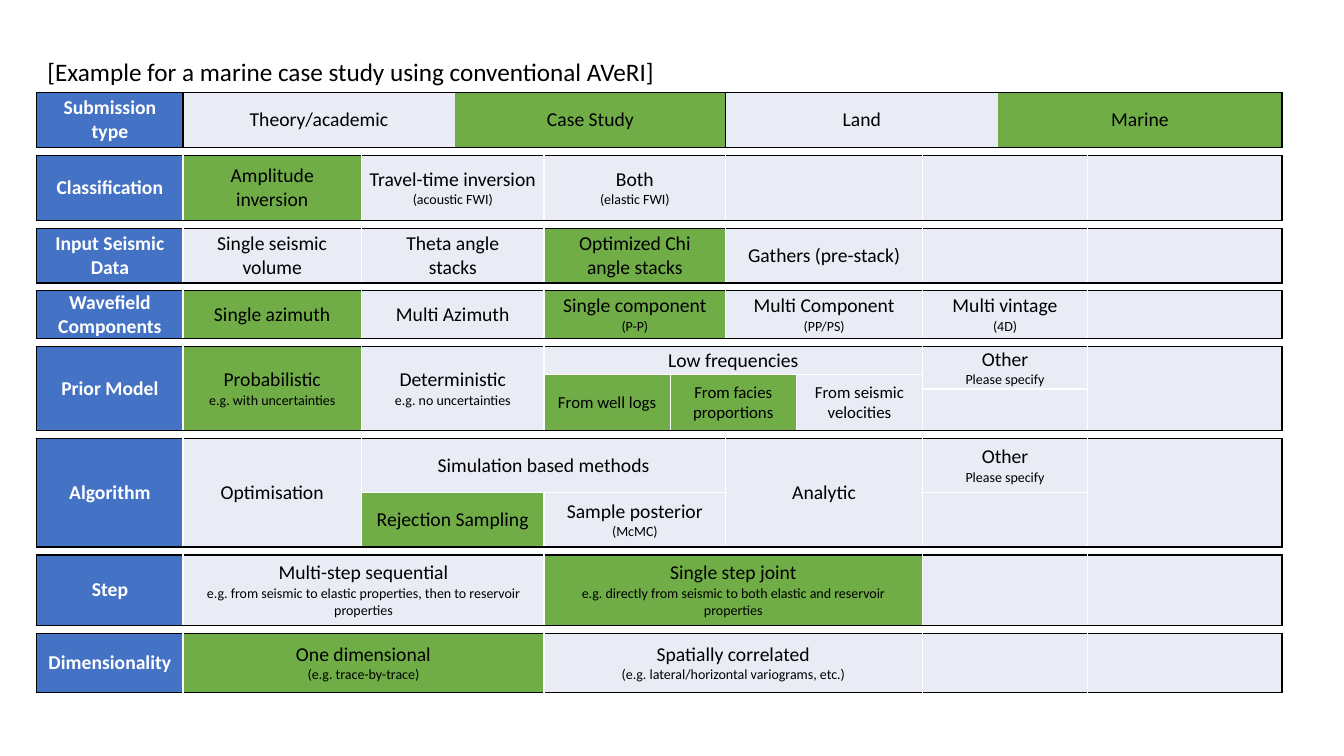
from typing import NamedTuple

from lxml.etree import SubElement
from pptx import Presentation
from pptx.dml.color import RGBColor
from pptx.enum.text import MSO_ANCHOR, MSO_AUTO_SIZE, PP_ALIGN
from pptx.oxml.ns import qn
from pptx.util import Cm, Pt

BLACK = RGBColor(0x00, 0x00, 0x00)
WHITE = RGBColor(0xFF, 0xFF, 0xFF)
BLUE = RGBColor(0x44, 0x72, 0xC4)
GREEN = RGBColor(0x70, 0xAD, 0x47)
PALE = RGBColor(0xE9, 0xEB, 0xF5)

COLUMN_WIDTHS = [3.68, 4.5, 2.36, 2.24, 3.18, 1.4, 1.78, 3.18, 1.9, 2.26, 4.9]
COLUMN_COUNT = len(COLUMN_WIDTHS)
GAP_HEIGHT = 0.2


class Option(NamedTuple):
    column: int
    column_span: int
    text: str = ""
    note: str = ""
    chosen: bool = False
    row: int = 0
    row_span: int = 1
    size: int = 14


class Band(NamedTuple):
    label: str
    heights: list
    options: list
    dividers: dict = {}  # column -> line colour, white where not named


BANDS = [
    Band("Submission\ntype", [1.37], [
        Option(1, 2, "Theory/academic"),
        Option(3, 3, "Case Study", chosen=True),
        Option(6, 3, "Land"),
        Option(9, 2, "Marine", chosen=True),
    ], {1: BLACK, 3: None, 6: BLACK, 9: None}),
    Band("Classification", [1.65], [
        Option(1, 1, "Amplitude\ninversion", chosen=True),
        Option(2, 2, "Travel-time inversion", "(acoustic FWI)"),
        Option(4, 2, "Both", "(elastic FWI)"),
        Option(6, 2), Option(8, 2), Option(10, 1),
    ]),
    Band("Input Seismic Data", [1.37], [
        Option(1, 1, "Single seismic volume"),
        Option(2, 2, "Theta angle\nstacks"),
        Option(4, 2, "Optimized Chi\nangle stacks", chosen=True),
        Option(6, 2, "Gathers (pre-stack)"),
        Option(8, 2), Option(10, 1),
    ]),
    Band("Wavefield\nComponents", [1.19], [
        Option(1, 1, "Single azimuth", chosen=True),
        Option(2, 2, "Multi Azimuth"),
        Option(4, 2, "Single component", "(P-P)", chosen=True),
        Option(6, 2, "Multi Component", "(PP/PS)"),
        Option(8, 2, "Multi vintage", "(4D)"),
        Option(10, 1),
    ]),
    Band("Prior Model", [0.71, 0.36, 1.04], [
        Option(1, 1, "Probabilistic", "e.g. with uncertainties", True, row_span=3),
        Option(2, 2, "Deterministic", "e.g. no uncertainties", row_span=3),
        Option(4, 4, "Low frequencies"),
        Option(4, 1, "From well logs", chosen=True, row=1, row_span=2, size=12),
        Option(5, 2, "From facies proportions", chosen=True, row=1, row_span=2, size=12),
        Option(7, 1, "From seismic velocities", row=1, row_span=2, size=12),
        Option(8, 2, "Other", "Please specify", row_span=2),
        Option(8, 2, row=2),
        Option(10, 1, row_span=3),
    ]),
    Band("Algorithm", [1.37, 1.37], [
        Option(1, 1, "Optimisation", row_span=2),
        Option(2, 4, "Simulation based methods"),
        Option(2, 2, "Rejection Sampling", chosen=True, row=1),
        Option(4, 2, "Sample posterior", "(McMC)", row=1),
        Option(6, 2, "Analytic", row_span=2),
        Option(8, 2, "Other", "Please specify"),
        Option(8, 2, row=1),
        Option(10, 1, row_span=2),
    ]),
    Band("Step", [1.77], [
        Option(1, 3, "Multi-step sequential",
               "e.g. from seismic to elastic properties, then to reservoir properties"),
        Option(4, 4, "Single step joint",
               "e.g. directly from seismic to both elastic and reservoir properties", True),
        Option(8, 2), Option(10, 1),
    ]),
    Band("Dimensionality", [1.5], [
        Option(1, 3, "One dimensional", "(e.g. trace-by-trace)", True),
        Option(4, 4, "Spatially correlated", "(e.g. lateral/horizontal variograms, etc.)"),
        Option(8, 2), Option(10, 1),
    ]),
]


class SlideBuilder:
    font_name = "Calibri"
    note_size = 10

    def __init__(self, slide):
        self.slide = slide

    def add_run(self, paragraph, text, size, color=BLACK, bold=False):
        for index, line in enumerate(text.split("\n")):
            if index:
                paragraph.add_line_break()
            run = paragraph.add_run()
            run.text = line
            run.font.name = self.font_name
            run.font.size = Pt(size)
            run.font.bold = bold
            run.font.color.rgb = color

    def add_title(self, text, left, top, width, height):
        title = self.slide.shapes.title
        title.left, title.top, title.width, title.height = map(Cm, (left, top, width, height))
        frame = title.text_frame
        frame.word_wrap = False
        frame.auto_size = MSO_AUTO_SIZE.NONE
        frame.vertical_anchor = MSO_ANCHOR.MIDDLE
        frame.paragraphs[0].alignment = PP_ALIGN.LEFT
        self.add_run(frame.paragraphs[0], text, 18)

    def add_grid(self, left, top, widths, heights):
        frame = self.slide.shapes.add_table(len(heights), len(widths), Cm(left), Cm(top),
                                            Cm(sum(widths)), Cm(sum(heights)))
        grid = frame.table
        grid.first_row = grid.horz_banding = False
        for column, width in zip(grid.columns, widths):
            column.width = Cm(width)
        for row, height in zip(grid.rows, heights):
            row.height = Cm(height)
        return grid

    def set_border(self, cell, side, color):
        line = SubElement(cell._tc.get_or_add_tcPr(), qn(f"a:{side}"), w=str(Pt(1)))
        if color is None:
            SubElement(line, qn("a:noFill"))
        else:
            fill = SubElement(line, qn("a:solidFill"))
            SubElement(fill, qn("a:srgbClr"), val=str(color))

    def fill_block(self, grid, row, option, fill, borders, color=BLACK, bold=False):
        """Merge, outline and fill one block; borders are left, right, top, bottom."""
        last_row = row + option.row_span - 1
        last_column = option.column + option.column_span - 1
        for r in range(row, last_row + 1):
            for c in range(option.column, last_column + 1):
                cell = grid.cell(r, c)
                is_first = (r, c) == (row, option.column)
                outer = (c == option.column, c == last_column, r == row, r == last_row)
                for side, line, is_outer in zip(("lnL", "lnR", "lnT", "lnB"), borders, outer):
                    if is_outer or is_first:
                        self.set_border(cell, side, line)
                cell.margin_left = cell.margin_right = Cm(0.3 if option.column_span > 2 else 0.15)
                cell.margin_top = cell.margin_bottom = 0
                cell.vertical_anchor = MSO_ANCHOR.MIDDLE
                cell.fill.solid()
                cell.fill.fore_color.rgb = fill
                if not option.text or not is_first:
                    SubElement(cell.text_frame.paragraphs[0]._p, qn("a:endParaRPr"), sz="100")
        block = grid.cell(row, option.column)
        if (last_row, last_column) != (row, option.column):
            block.merge(grid.cell(last_row, last_column))
        if option.text:
            heading = block.text_frame.paragraphs[0]
            heading.alignment = PP_ALIGN.CENTER
            self.add_run(heading, option.text, option.size, color, bold)
        if option.note:
            note = block.text_frame.add_paragraph()
            note.alignment = PP_ALIGN.CENTER
            self.add_run(note, option.note, self.note_size)

    def add_band(self, grid, start, band):
        depth = len(band.heights)
        edges = {0: BLACK, COLUMN_COUNT: BLACK, **band.dividers}
        label = Option(0, 1, band.label, row_span=depth)
        for option in [label, *band.options]:
            is_label = option is label
            fill = BLUE if is_label else GREEN if option.chosen else PALE
            borders = (edges.get(option.column, WHITE),
                       edges.get(option.column + option.column_span, WHITE),
                       BLACK if option.row == 0 else WHITE,
                       BLACK if option.row + option.row_span == depth else WHITE)
            self.fill_block(grid, start + option.row, option, fill, borders,
                            WHITE if is_label else BLACK, is_label)


def main():
    presentation = Presentation()
    presentation.slide_width, presentation.slide_height = Cm(33.87), Cm(19.05)
    builder = SlideBuilder(presentation.slides.add_slide(presentation.slide_layouts[5]))

    # Heading
    builder.add_title("[Example for a marine case study using conventional AVeRI]",
                      0.94, 1.28, 15.9, 1.03)

    # Table with a thin white row between the bands
    heights = []
    for band in BANDS:
        heights += [*band.heights, GAP_HEIGHT]
    grid = builder.add_grid(0.93, 2.34, COLUMN_WIDTHS, heights[:-1])
    start = 0
    for band in BANDS:
        if start:
            builder.fill_block(grid, start - 1, Option(0, COLUMN_COUNT), WHITE,
                               (None, None, BLACK, BLACK))
        builder.add_band(grid, start, band)
        start += len(band.heights) + 1

    presentation.save("out.pptx")


if __name__ == "__main__":
    main()
